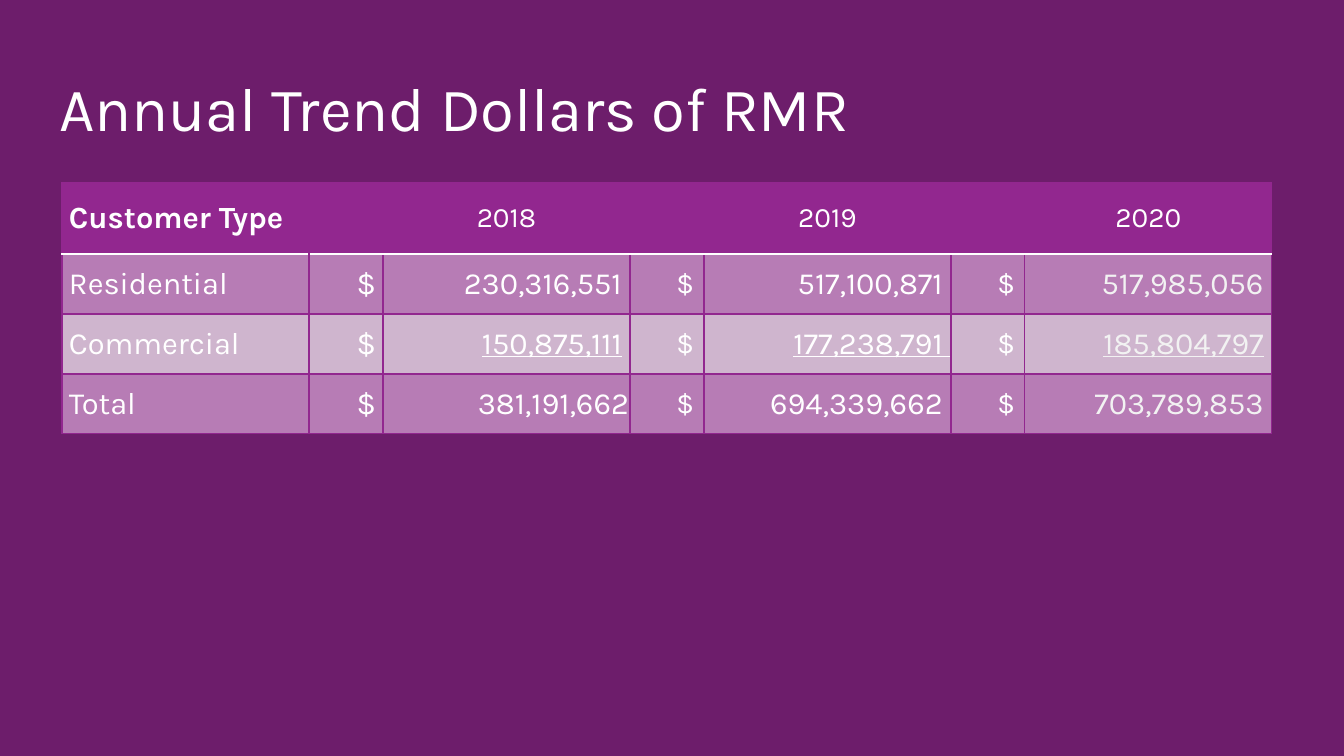
from lxml.etree import SubElement
from pptx import Presentation
from pptx.dml.color import RGBColor
from pptx.enum.text import MSO_ANCHOR, PP_ALIGN
from pptx.oxml.ns import qn
from pptx.util import Pt

EMU_PER_PX = 914400 / 100.8
FONT = "Karla"
BACKGROUND, PURPLE, WHITE, OFF_WHITE = "6D1D6B", "92278F", "FFFFFF", "F2F2F2"
ROW_FILLS = ["B77CB5", "CFB5CE"]
LABEL_WIDTH, SIGN_WIDTH, AMOUNT_WIDTH = 247, 74, 247
HEADER_HEIGHT, ROW_HEIGHT = 71, 60
LABEL_INSETS, SIGN_INSETS, AMOUNT_INSETS = (7, 4, 7, 4), (10, 5, 10, 5), (1, 1, 1, 0)

YEARS = ["2018", "2019", "2020"]
# Each amount is its text and the trailing gap.
CUSTOMER_ROWS = [
    ("Residential", [("230,316,551", " "), ("517,100,871", " "), ("517,985,056", " ")]),
    ("Commercial", [("150,875,111", " "), ("177,238,791 ", ""), ("185,804,797", " ")]),
    ("Total", [("381,191,662", ""), ("694,339,662", " "), ("703,789,853", " ")]),
]


def px(length):
    return round(length * EMU_PER_PX)


def color(hex_code):
    return RGBColor.from_string(hex_code)


def add_text(paragraph, text, size=22, fill=WHITE, bold=False, underline=False,
             align=PP_ALIGN.LEFT):
    paragraph.alignment = align
    run = paragraph.add_run()
    run.text = text
    font = run.font
    font.name, font.size = FONT, Pt(size)
    font.bold, font.underline = bold, underline
    font.color.rgb = color(fill)


def set_insets(target, insets):
    (target.margin_left, target.margin_top,
     target.margin_right, target.margin_bottom) = map(px, insets)


def set_borders(cell, **special):
    """Draw thin purple edges, except those given as edge=(colour, points)."""
    properties = cell._tc.get_or_add_tcPr()
    for index, edge in enumerate(["lnL", "lnR", "lnT", "lnB"]):
        hex_code, points = special.get(edge, (PURPLE, 1))
        line = properties.makeelement(qn(f"a:{edge}"), {"w": str(Pt(points))})
        fill = SubElement(line, qn("a:solidFill"))
        SubElement(fill, qn("a:srgbClr"), val=hex_code)
        properties.insert(index, line)


def format_cell(cell, fill, insets, **borders):
    cell.fill.solid()
    cell.fill.fore_color.rgb = color(fill)
    cell.vertical_anchor = MSO_ANCHOR.MIDDLE
    set_insets(cell, insets)
    set_borders(cell, **borders)
    return cell.text_frame.paragraphs[0]


def add_title(slide, left, top, width, height):
    title = slide.shapes.title
    title.left, title.top, title.width, title.height = map(px, (left, top, width, height))
    frame = title.text_frame
    frame.word_wrap = True
    frame.vertical_anchor = MSO_ANCHOR.TOP
    set_insets(frame, (10, 11, 10, 0))
    add_text(frame.paragraphs[0], "Annual Trend Dollars of RMR", size=44)


def fill_header(table):
    rule = (WHITE, 1.5)
    headings = ["Customer Type", ""] + [text for year in YEARS for text in (year, "")][:-1]
    for column, heading in enumerate(headings):
        insets = SIGN_INSETS if column else LABEL_INSETS
        paragraph = format_cell(table.cell(0, column), PURPLE, insets, lnB=rule)
        if column == 0:
            add_text(paragraph, heading, bold=True)
        elif heading:
            add_text(paragraph, heading, size=20, align=PP_ALIGN.CENTER)
    table.cell(0, 0).merge(table.cell(0, 1))


def fill_customer_row(table, row, label, amounts):
    fill = ROW_FILLS[(row - 1) % 2]
    borders = {"lnT": (WHITE, 1.5)} if row == 1 else {}
    add_text(format_cell(table.cell(row, 0), fill, LABEL_INSETS, **borders), label)
    for index, (amount, gap) in enumerate(amounts):
        first = index == 0
        sign = format_cell(table.cell(row, 2 * index + 1), fill,
                           LABEL_INSETS if first else SIGN_INSETS, **borders)
        add_text(sign, "$", size=22 if first else 20, align=PP_ALIGN.RIGHT)
        text_color = OFF_WHITE if index == len(amounts) - 1 else WHITE
        paragraph = format_cell(table.cell(row, 2 * index + 2), fill, AMOUNT_INSETS, **borders)
        add_text(paragraph, amount, fill=text_color, underline=label == "Commercial",
                 align=PP_ALIGN.RIGHT)
        if gap:
            add_text(paragraph, gap, fill=text_color, align=PP_ALIGN.RIGHT)


def add_revenue_table(slide, left, top):
    widths = [LABEL_WIDTH] + [SIGN_WIDTH, AMOUNT_WIDTH] * len(YEARS)
    heights = [HEADER_HEIGHT] + [ROW_HEIGHT] * len(CUSTOMER_ROWS)
    table = slide.shapes.add_table(len(heights), len(widths), px(left), px(top),
                                   px(sum(widths)), px(sum(heights))).table
    for column, width in zip(table.columns, widths):
        column.width = px(width)
    for row, height in zip(table.rows, heights):
        row.height = px(height)
    fill_header(table)
    for row, (label, amounts) in enumerate(CUSTOMER_ROWS, start=1):
        fill_customer_row(table, row, label, amounts)


def main():
    presentation = Presentation()
    presentation.slide_width, presentation.slide_height = px(1344), px(756)
    slide = presentation.slides.add_slide(presentation.slide_layouts[5])
    slide.background.fill.solid()
    slide.background.fill.fore_color.rgb = color(BACKGROUND)
    add_title(slide, 49, 59, 1236, 66)
    add_revenue_table(slide, 62, 183)
    presentation.save("out.pptx")


if __name__ == "__main__":
    main()
